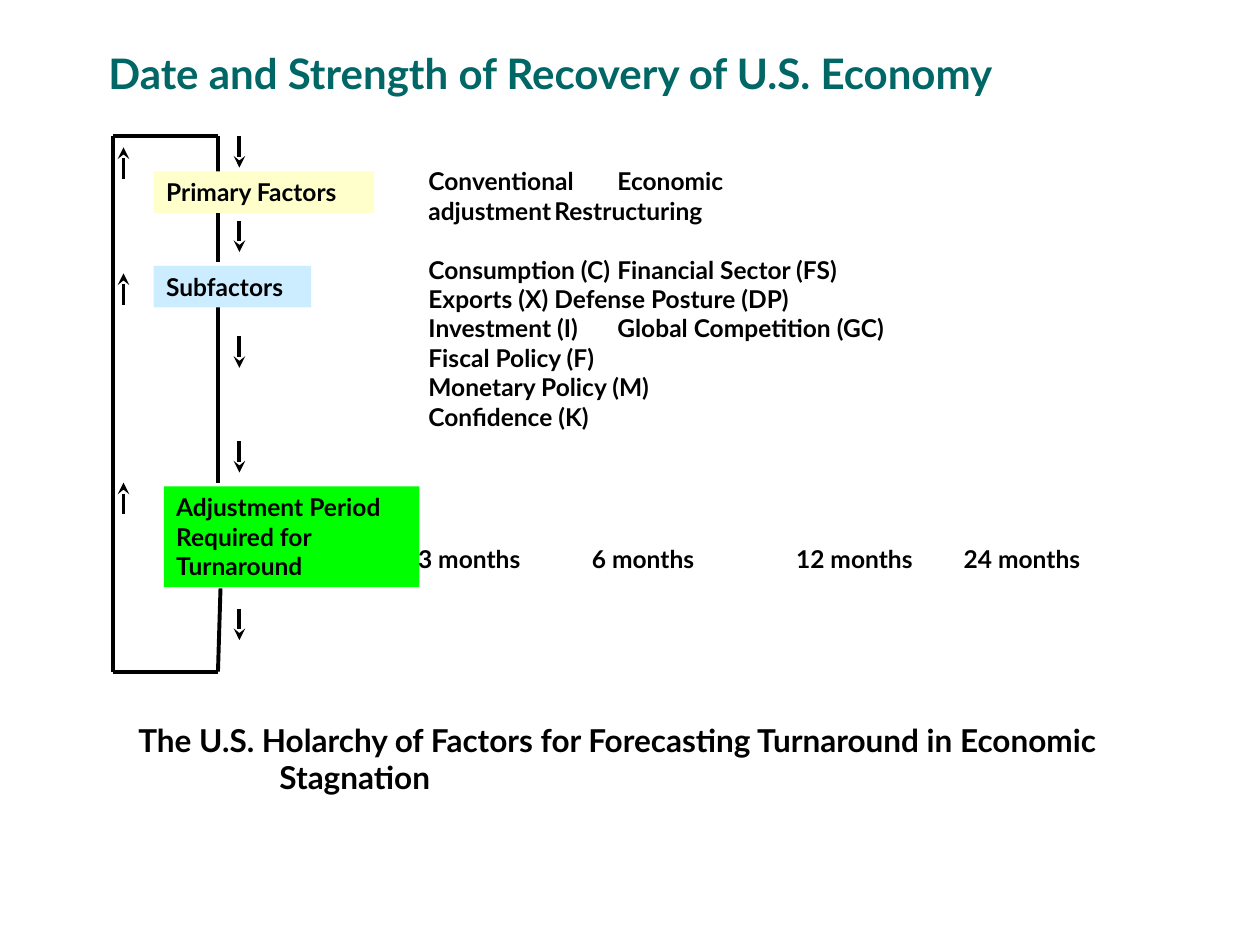
from dataclasses import dataclass

import pptx
import pptx.dml.color
import pptx.enum.shapes
import pptx.enum.text
import pptx.oxml
import pptx.oxml.ns
import pptx.util
from pptx.util import Inches

BLACK = pptx.dml.color.RGBColor(0x00, 0x00, 0x00)
TEAL = pptx.dml.color.RGBColor(0x00, 0x66, 0x66)
GREEN = pptx.dml.color.RGBColor(0x00, 0xFF, 0x00)
CREAM = pptx.dml.color.RGBColor(0xFF, 0xFF, 0xCC)
SKY = pptx.dml.color.RGBColor(0xCC, 0xEC, 0xFF)
FONT = "Lato"
LOOP_LEFT, LOOP_RIGHT, LOOP_TOP, LOOP_BOTTOM = 0.9, 1.73, 1.08, 5.33
UP_X, DOWN_X, ARROW_LENGTH = 0.98, 1.9, 0.25


@dataclass
class Segment:
    x1: float
    y1: float
    x2: float
    y2: float
    arrow: bool = False


@dataclass
class Stage:
    left: float
    top: float
    width: float
    height: float
    fill: pptx.dml.color.RGBColor
    lines: list[str]


@dataclass
class FactorRow:
    conventional: str
    restructuring: str = ""
    stop: float = 4
    gap: float = 0


SEGMENTS = [
    Segment(LOOP_LEFT, LOOP_TOP, LOOP_RIGHT, LOOP_TOP),
    Segment(LOOP_LEFT, LOOP_TOP, LOOP_LEFT, LOOP_BOTTOM),
    Segment(1.75, 4.67, LOOP_RIGHT, LOOP_BOTTOM),
    Segment(LOOP_LEFT, LOOP_BOTTOM, LOOP_RIGHT, LOOP_BOTTOM),
]
SEGMENTS += [Segment(LOOP_RIGHT, top, LOOP_RIGHT, bottom)
             for top, bottom in ((LOOP_TOP, 1.42), (1.67, 2.08), (2.42, 3.83))]
SEGMENTS += [Segment(UP_X, top + ARROW_LENGTH, UP_X, top, True) for top in (1.17, 2.17, 3.83)]
SEGMENTS += [Segment(DOWN_X, top, DOWN_X, top + ARROW_LENGTH, True)
             for top in (1.08, 1.75, 2.67, 3.5, 4.83)]

STAGES = [
    Stage(1.3, 3.86, 2.03, 0.8, GREEN, ["Adjustment Period", "Required for", "Turnaround"]),
    Stage(1.22, 1.36, 1.75, 0.33, CREAM, ["Primary Factors"]),
    Stage(1.22, 2.11, 1.25, 0.33, SKY, ["Subfactors"]),
]

FACTORS = [
    FactorRow("Conventional", "Economic"),
    FactorRow("adjustment", "Restructuring", stop=3),
    FactorRow("Consumption (C)", "Financial Sector (FS)", gap=16.8),
    FactorRow("Exports (X)", "Defense Posture (DP)", stop=3),
    FactorRow("Investment (I)", "Global Competition (GC)"),
    FactorRow("Fiscal Policy (F)"),
    FactorRow("Monetary Policy (M)"),
    FactorRow("Confidence (K)"),
]


def add_child(parent, tag: str, **attributes: str):
    child = pptx.oxml.parse_xml(f"<{tag} {pptx.oxml.ns.nsdecls('a')}/>")
    for name, value in attributes.items():
        child.set(name, value)
    parent.append(child)
    return child


def place(shape, left: float, top: float, width: float, height: float) -> None:
    shape.left, shape.top = Inches(left), Inches(top)
    shape.width, shape.height = Inches(width), Inches(height)


def write_lines(shape, lines: list[str], size: float = 14,
                color: pptx.dml.color.RGBColor = BLACK) -> list:
    frame = shape.text_frame
    frame.word_wrap = True
    frame.auto_size = pptx.enum.text.MSO_AUTO_SIZE.NONE
    frame.vertical_anchor = pptx.enum.text.MSO_ANCHOR.TOP
    for index, line in enumerate(lines):
        para = frame.paragraphs[0] if index == 0 else frame.add_paragraph()
        para.alignment = pptx.enum.text.PP_ALIGN.LEFT
        para.space_before = pptx.util.Pt(0)
        span = para.add_run()
        span.text = line
        span.font.name = FONT
        span.font.size = pptx.util.Pt(size)
        span.font.bold = True
        span.font.color.rgb = color
    return list(frame.paragraphs)


def set_tabs(para, stops: list[float]) -> None:
    tabs = add_child(para._p.get_or_add_pPr(), "a:tabLst")
    for stop in stops:
        add_child(tabs, "a:tab", pos=str(Inches(stop)), algn="l")


def set_indent(para, margin: float, indent: float) -> None:
    properties = para._p.get_or_add_pPr()
    properties.set("marL", str(Inches(margin)))
    properties.set("indent", str(Inches(indent)))


def draw_segment(page, segment: Segment) -> None:
    line = page.shapes.add_connector(
        pptx.enum.shapes.MSO_CONNECTOR.STRAIGHT,
        Inches(segment.x1), Inches(segment.y1), Inches(segment.x2), Inches(segment.y2))
    line.line.color.rgb = BLACK
    line.line.width = pptx.util.Pt(2.25)
    if segment.arrow:
        add_child(line.line._get_or_add_ln(), "a:tailEnd", type="stealth")
    add_child(line._element.spPr, "a:effectLst")


def draw_stage(page, stage: Stage) -> None:
    box = page.shapes.add_shape(
        pptx.enum.shapes.MSO_SHAPE.RECTANGLE, Inches(stage.left), Inches(stage.top),
        Inches(stage.width), Inches(stage.height))
    box.shadow.inherit = False
    box.fill.solid()
    box.fill.fore_color.rgb = stage.fill
    box.line.fill.background()
    write_lines(box, stage.lines)


def draw_factors(body, rows: list[FactorRow]) -> None:
    place(body, 3.3, 1.27, 6.59, 2.19)
    lines = ["\t".join(filter(None, (row.conventional, row.restructuring))) for row in rows]
    for row, para in zip(rows, write_lines(body, lines)):
        para.space_before = pptx.util.Pt(row.gap)
        set_indent(para, 0, 0)
        add_child(para._p.get_or_add_pPr(), "a:buNone")
        if row.restructuring:
            set_tabs(para, [row.stop])


def add_text(page, left: float, top: float, width: float, height: float,
             text: str, size: float):
    box = page.shapes.add_textbox(Inches(left), Inches(top), Inches(width), Inches(height))
    return write_lines(box, [text], size)[0]


def main() -> None:
    deck = pptx.Presentation()
    deck.slide_width, deck.slide_height = Inches(10), Inches(7.5)
    page = deck.slides.add_slide(deck.slide_layouts[1])
    for segment in SEGMENTS:
        draw_segment(page, segment)
    for stage in STAGES:
        draw_stage(page, stage)
    title = page.shapes.title
    place(title, 0.76, 0.33, 8.16, 0.5)
    write_lines(title, ["Date and Strength of Recovery of U.S. Economy"], 24, TEAL)
    draw_factors(page.placeholders[1], FACTORS)
    caption = add_text(
        page, 1, 5.67, 8.06, 0.7,
        "The U.S. Holarchy of Factors for Forecasting Turnaround in Economic Stagnation", 18)
    set_indent(caption, 1.12, -1.12)
    periods = add_text(page, 3.22, 4.27, 6.64, 0.33,
                       "3 months\t6 months\t12 months\t24 months", 14)
    set_tabs(periods, [1.38, 3, 4.33])
    deck.save("out.pptx")


if __name__ == "__main__":
    main()
